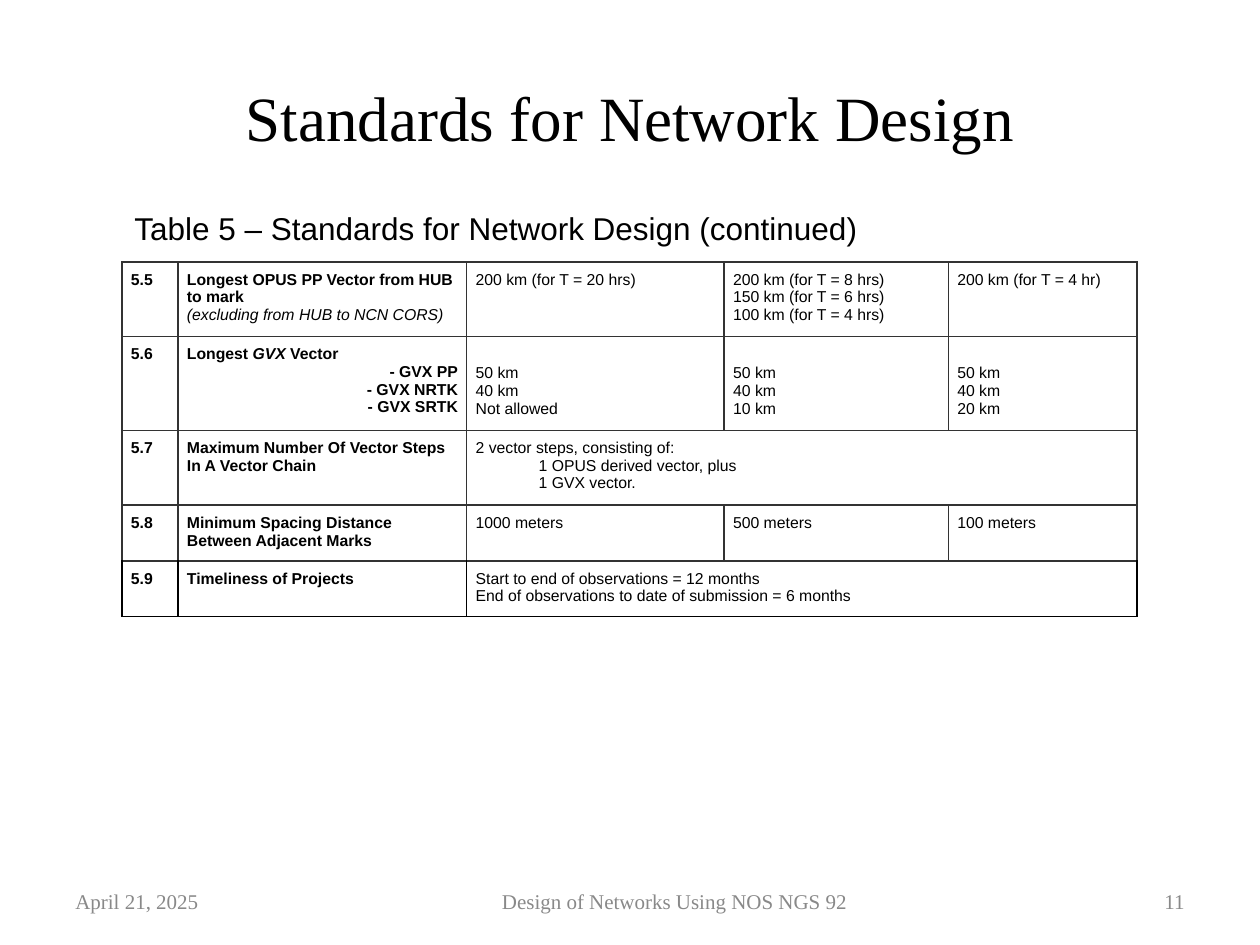
from dataclasses import dataclass

from lxml import etree
from pptx import Presentation
from pptx import util as u
from pptx.dml.color import RGBColor
from pptx.enum import text
from pptx.oxml.ns import qn


@dataclass(frozen=True)
class Theme:
    serif: str = "Times New Roman"
    sans: str = "Arial"
    black: str = "000000"
    rule: str = "333333"
    grey: str = "898989"
    title: int = 36
    caption: int = 18
    footer: int = 12
    cell: int = 9


theme = Theme()
LEFT, CENTER, RIGHT = (text.PP_ALIGN.LEFT, text.PP_ALIGN.CENTER, text.PP_ALIGN.RIGHT)


def add_span(para, words, face, size, color, **style):
    span = para.add_run()
    span.text = words
    span.font.color.rgb = RGBColor.from_string(color)
    for name, value in dict(name=face, size=u.Pt(size), **style).items():
        setattr(span.font, name, value)


def add_border(cell, sides):
    """Draw 1 pt cell edges; sides maps lnL, lnR, lnT, lnB in that order to colours."""
    props = cell._tc.get_or_add_tcPr()
    for index, (side, color) in enumerate(sides.items()):
        line = etree.Element(qn(f"a:{side}"), w=str(u.Pt(1)))
        fill = etree.SubElement(line, qn("a:solidFill"))
        etree.SubElement(fill, qn("a:srgbClr"), val=color)
        props.insert(index, line)


deck = Presentation()
deck.slide_width, deck.slide_height = u.Cm(25.4), u.Cm(19.05)
page = deck.slides.add_slide(deck.slide_layouts[6])

# Title, caption and footer: words, place in cm, alignment, anchor, type
MIDDLE, TOP = text.MSO_ANCHOR.MIDDLE, text.MSO_ANCHOR.TOP
small = (theme.serif, theme.footer, theme.grey)
texts = [
    ("Standards for Network Design", (1.27, 0.76, 22.86, 3.18), CENTER, MIDDLE,
     (theme.serif, theme.title, theme.black)),
    ("Table 5 – Standards for Network Design (continued)", (2.46, 4.09, 16.05, 1.02),
     LEFT, TOP, (theme.sans, theme.caption, theme.black)),
    ("April 21, 2025", (1.27, 17.65, 3.56, 1.02), LEFT, MIDDLE, small),
    ("Design of Networks Using NOS NGS 92", (5.8, 17.65, 15.6, 1.02), CENTER, MIDDLE, small),
    ("11", (22.12, 17.65, 2.01, 1.02), RIGHT, MIDDLE, small),
]
for words, place, align, anchor, style in texts:
    frame = page.shapes.add_textbox(*map(u.Cm, place)).text_frame
    frame.word_wrap, frame.vertical_anchor = True, anchor
    frame.paragraphs[0].alignment = align
    add_span(frame.paragraphs[0], words, *style)

# Table content: *...* is italic, a leading tab indents, a leading line feed
# is a line break, and a leading dash marks a right-aligned item.
rows = [
    ("5.5", ["Longest OPUS PP Vector from HUB to mark", "*(excluding from HUB to NCN CORS)*"],
     ["200 km (for T = 20 hrs)"],
     ["200 km (for T = 8 hrs)", "150 km (for T = 6 hrs)", "100 km (for T = 4 hrs)"],
     ["200 km (for T = 4 hr)"]),
    ("5.6", ["Longest *GVX *Vector", "- GVX PP", "- GVX NRTK", "- GVX SRTK"],
     ["\n50 km", "40 km", "Not allowed"],
     ["\n50 km", "40 km", "10 km"],
     ["\n50 km", "40 km", "20 km"]),
    ("5.7", ["Maximum Number Of Vector Steps In A Vector Chain"],
     ["2 vector steps, consisting of:", "\t1 OPUS derived vector, plus", "\t1 GVX vector."]),
    ("5.8", ["Minimum Spacing Distance Between Adjacent Marks"],
     ["1000 meters"], ["500 meters"], ["100 meters"]),
    ("5.9", ["Timeliness of Projects"],
     ["Start to end of observations = 12 months",
      "End of observations to date of submission = 6 months"]),
]
widths = [1.13, 5.82, 5.19, 4.52, 3.8]
line_counts = [3, 4, 3, 2, 2]
PADDING, LINE = 0.18, 0.355
heights = [2 * PADDING + count * LINE for count in line_counts]

table = page.shapes.add_table(
    len(rows), len(widths), u.Cm(2.46), u.Cm(5.28),
    u.Cm(sum(widths)), u.Cm(sum(heights))).table
table.first_row = table.horz_banding = False
for column, width in zip(table.columns, widths):
    column.width = u.Cm(width)
for row, height in zip(table.rows, heights):
    row.height = u.Cm(height)

margins = dict.fromkeys(
    ("margin_left", "margin_right", "margin_top", "margin_bottom"), u.Cm(PADDING))
for r, (number, *contents) in enumerate(rows):
    edge = theme.black if r == len(rows) - 1 else theme.rule
    for cell in table.rows[r].cells:
        cell.fill.background()
        add_border(cell, {"lnL": edge, "lnR": edge, "lnT": theme.rule, "lnB": edge})
    if len(contents) == 2:
        table.cell(r, 2).merge(table.cell(r, 4))

    for c, lines in enumerate([[number], *contents]):
        cell = table.cell(r, c)
        for name, value in margins.items():
            setattr(cell, name, value)
        for index, line in enumerate(lines):
            frame = cell.text_frame
            para = frame.add_paragraph() if index else frame.paragraphs[0]
            para.alignment = RIGHT if line.startswith("- ") else LEFT
            if line.startswith("\t"):
                para._p.get_or_add_pPr().set("marL", str(u.Cm(1.27)))
            if line.startswith("\n"):
                para.add_line_break()
                para.font.size = u.Pt(theme.cell)
                para._p.find(qn("a:br")).get_or_add_rPr().set("sz", str(theme.cell * 100)) \
                    if hasattr(para._p.find(qn("a:br")), "get_or_add_rPr") else \
                    etree.SubElement(para._p.find(qn("a:br")), qn("a:rPr"),
                                     sz=str(theme.cell * 100))
            for part, words in enumerate(line.strip().split("*")):
                italic = part % 2 == 1
                if words:
                    bold = c < 2 and not (italic and line.startswith("*"))
                    add_span(para, words, theme.sans, theme.cell, theme.black,
                             bold=bold, italic=italic)

deck.save("out.pptx")
